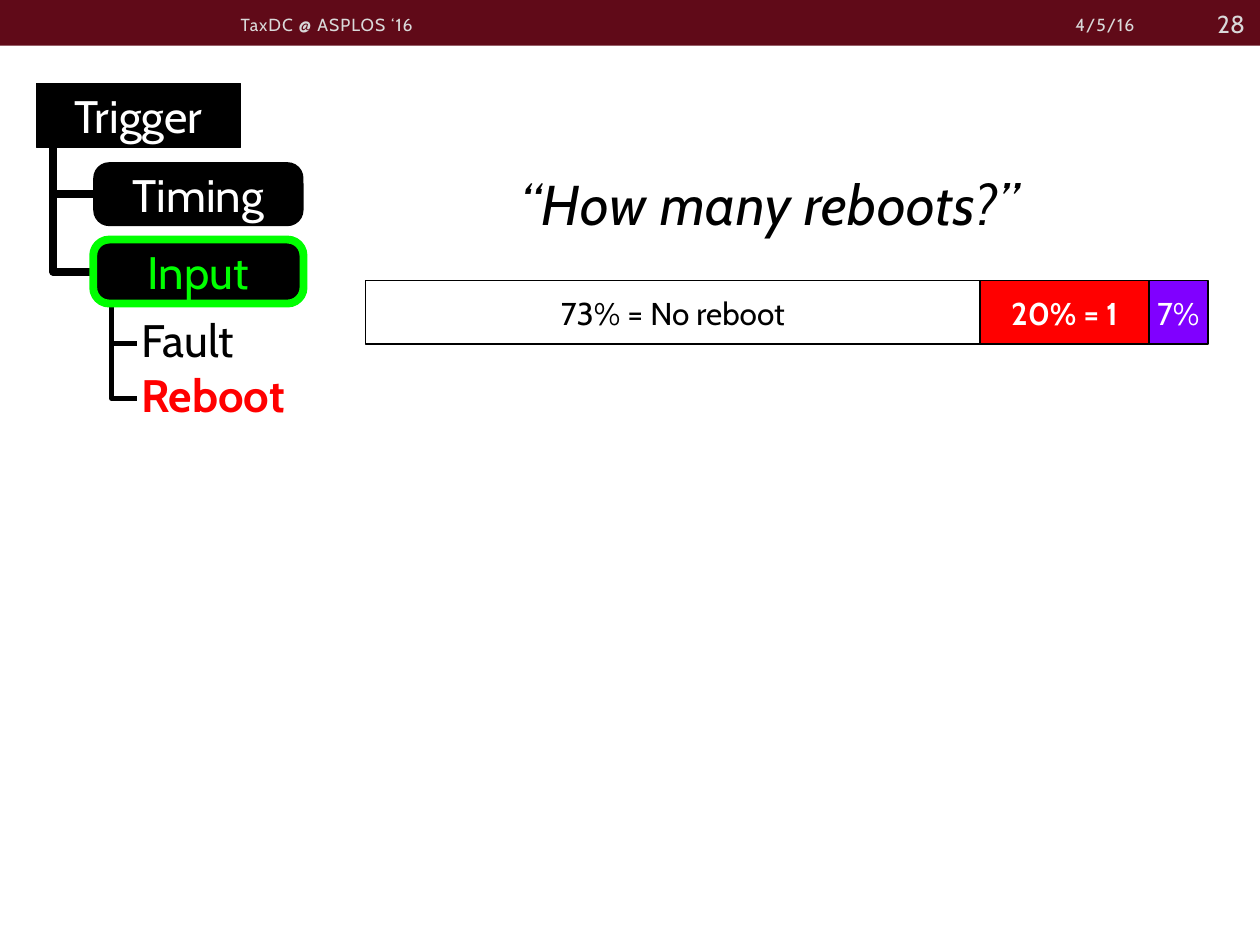
"""Build the reboot-count slide with its trigger tree and share bar."""
from pptx import Presentation
from pptx import util as u
from pptx.dml.color import RGBColor
from pptx.enum import shapes, text
from pptx.oxml.ns import qn
from lxml import etree

COLORS = {
    "black": "000000", "white": "FFFFFF", "gray": "D9D9D9", "maroon": "600A18",
    "green": "00FF00", "red": "FF0000", "violet": "8000FF",
}
LEFT, CENTER, RIGHT = text.PP_ALIGN.LEFT, text.PP_ALIGN.CENTER, text.PP_ALIGN.RIGHT
TOP, MIDDLE = text.MSO_ANCHOR.TOP, text.MSO_ANCHOR.MIDDLE
RECT = shapes.MSO_SHAPE.RECTANGLE
ROUND = shapes.MSO_SHAPE.ROUNDED_RECTANGLE


def rgb(name):
    return RGBColor.from_string(COLORS[name])


class Deck:
    """Style and current slide, with lengths in centimetres."""

    font = "Cabin"

    def __init__(self):
        self.prs = Presentation()
        self.prs.slide_width, self.prs.slide_height = u.Cm(25.4), u.Cm(19.05)
        self.s = self.prs.slides.add_slide(self.prs.slide_layouts[5])

    def put_text(self, sp, lines, size, color, align=CENTER, anchor=MIDDLE,
                 wrap=True, bold=False, italic=False, spacing=0):
        tf = sp.text_frame
        tf.word_wrap, tf.vertical_anchor = wrap, anchor
        tf.auto_size = text.MSO_AUTO_SIZE.NONE
        tf.text = lines
        for p in tf.paragraphs:
            p.alignment = align
            f = p.font
            f.name, f.size, f.bold, f.italic = self.font, u.Pt(size), bold, italic
            f.color.rgb = rgb(color)
            if spacing:
                for r in p.runs:
                    r._r.get_or_add_rPr().set("spc", str(spacing))
        return tf

    def title(self, box, words, size, **style):
        sp = self.s.shapes.title
        sp.left, sp.top, sp.width, sp.height = map(u.Cm, box)
        self.put_text(sp, words, size, "black", anchor=TOP, **style)

    def label(self, box, words, size, color, **style):
        sp = self.s.shapes.add_textbox(*map(u.Cm, box))
        return self.put_text(sp, words, size, color, **style)

    def block(self, kind, box, fill, line=None, width=0.75):
        sp = self.s.shapes.add_shape(kind, *map(u.Cm, box))
        sp.shadow.inherit = False
        sp.fill.solid()
        sp.fill.fore_color.rgb = rgb(fill)
        if line:
            sp.line.color.rgb, sp.line.width = rgb(line), u.Pt(width)
        else:
            sp.line.fill.background()
        return sp

    def elbow(self, x1, y1, x2, y2, width):
        """Draw a line that goes down first and then right."""
        w, h = y2 - y1, x2 - x1
        left, top = (x1 + x2 - w) / 2, (y1 + y2 - h) / 2
        c = self.s.shapes.add_connector(
            shapes.MSO_CONNECTOR.ELBOW, *map(u.Cm, (left + w, top, left, top + h)))
        c.line.color.rgb, c.line.width = rgb("black"), u.Pt(width)
        spPr = c._element.spPr
        spPr.find(qn("a:xfrm")).set("rot", str(270 * 60000))
        spPr.find(qn("a:prstGeom")).set("prst", "bentConnector2")
        etree.SubElement(spPr, qn("a:effectLst"))


def main():
    d = Deck()
    d.block(RECT, (0, 0, 25.4, 0.92), "maroon")
    d.label((18.57, 0.13, 4.55, 0.74), "4/5/16", 10, "gray", align=RIGHT, spacing=60)
    d.label((4.6, 0.13, 9.04, 0.74), "TaxDC @ ASPLOS ‘16", 10, "gray", align=LEFT, spacing=60)
    d.label((23.11, -0.03, 2.24, 1.02), "28", 14, "gray", align=RIGHT)
    d.title((5.64, 3.28, 19.76, 2), "“How many reboots?”", 32, italic=True, spacing=30)

    node_x, node_h = 1.88, 1.29
    nodes = [("Timing", 3.27, "white", None), ("Input", 4.83, "green", "green")]
    for _, y, _, _ in nodes:
        d.elbow(1.07, 2.97, node_x, y + node_h / 2, 4.5)
    for y in (6.93, 8.03):
        d.elbow(2.25, 6.1, 2.77, y, 3)

    root = d.block(RECT, (0.74, 1.68, 4.11, node_h), "black", "black")
    d.put_text(root, "Trigger", 26, "white")
    for name, y, color, line in nodes:
        sp = d.block(ROUND, (node_x, y, 4.24, node_h), "black", line, 4.5)
        sp.adjustments[0] = 0.25
        d.put_text(sp, name, 26, color)
    tf = d.label((2.6, 6.17, 3.96, 2.49), "Fault\nReboot", 26, "black",
                 align=LEFT, anchor=TOP, wrap=False)
    reboot = tf.paragraphs[1].font
    reboot.bold, reboot.color.rgb = True, rgb("red")

    x = 7.37
    for words, width, fill, color, bold, wrap in (
            ("73% = No reboot", 12.39, "white", "black", False, True),
            ("20% = 1", 3.4, "red", "white", True, True),
            ("7%", 1.19, "violet", "white", False, False)):
        sp = d.block(RECT, (x, 5.66, width, 1.28), fill, "black", 0.85)
        d.put_text(sp, words, 18, color, bold=bold, wrap=wrap)
        x += width

    d.prs.save("out.pptx")


if __name__ == "__main__":
    main()
